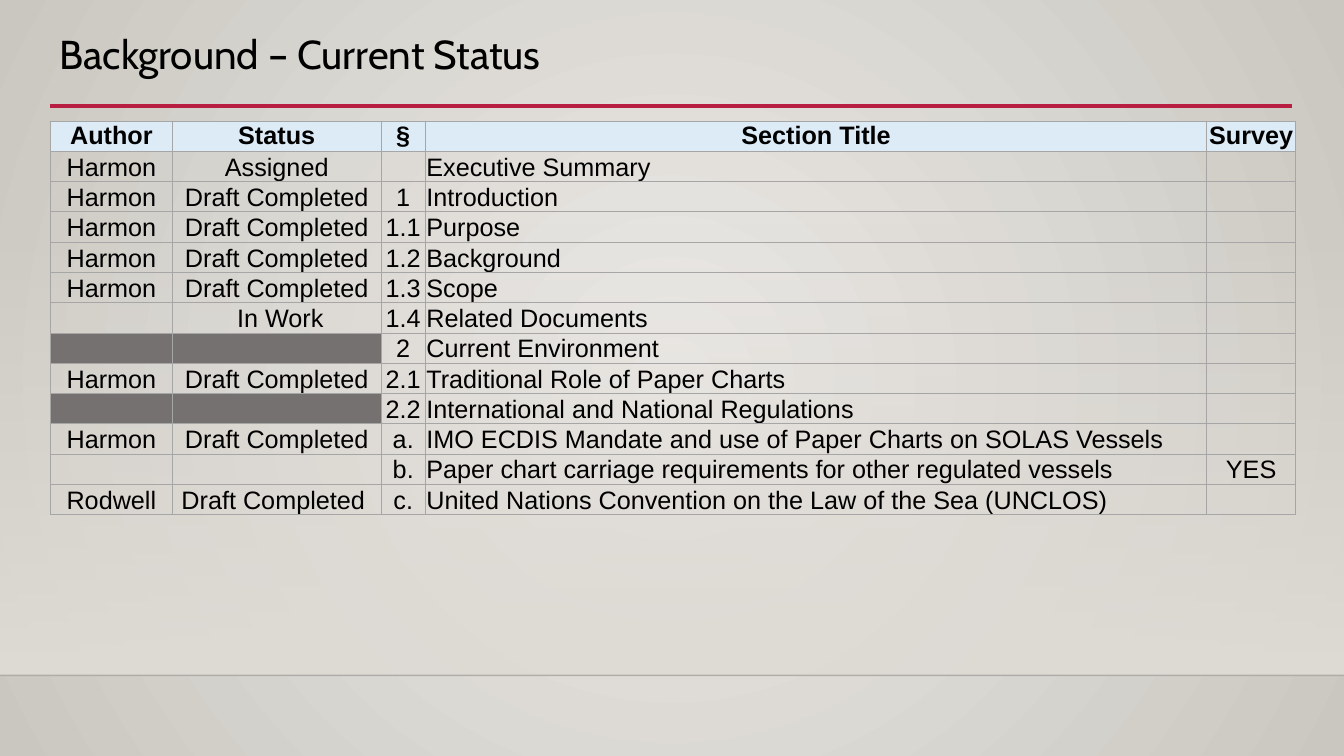
import pptx
import pptx.dml.color
import pptx.enum.shapes
import pptx.enum.text
import pptx.oxml
import pptx.oxml.ns
import pptx.util
from lxml import etree

Inches = pptx.util.Inches
Pt = pptx.util.Pt
RGBColor = pptx.dml.color.RGBColor
ALIGN = pptx.enum.text.PP_ALIGN
ANCHOR = pptx.enum.text.MSO_ANCHOR
qn = pptx.oxml.ns.qn

BLACK = RGBColor(0x00, 0x00, 0x00)
LINE_BLACK = RGBColor(0x00, 0x00, 0x01)
CRIMSON = RGBColor(0xB7, 0x1E, 0x42)
PALE_STONE = RGBColor(0xEC, 0xEA, 0xE7)
DARK_STONE = RGBColor(0xCA, 0xC7, 0xC1)
FLOOR_STONE = RGBColor(0xDF, 0xDB, 0xD5)
HEADER_BLUE = RGBColor(0xDD, 0xEB, 0xF7)
BLOCKED_GREY = RGBColor(0x75, 0x71, 0x71)
BORDER_GREY = RGBColor(0xA6, 0xA6, 0xA6)

COLUMN_WIDTHS = [1.21, 2.07, 0.44, 7.75, 0.88]
TITLE_COLUMN = 3
BLOCKED_ROWS = (7, 9)
ROWS = [
    ("Author", "Status", "§", "Section Title", "Survey"),
    ("Harmon", "Assigned", "", "Executive Summary", ""),
    ("Harmon", "Draft Completed", "1", "Introduction", ""),
    ("Harmon", "Draft Completed", "1.1", "Purpose", ""),
    ("Harmon", "Draft Completed", "1.2", "Background", ""),
    ("Harmon", "Draft Completed", "1.3", "Scope", ""),
    ("", " In Work", "1.4", "Related Documents", ""),
    ("", "", "2", "Current Environment", ""),
    ("Harmon", "Draft Completed", "2.1", "Traditional Role of Paper Charts", ""),
    ("", "", "2.2", "International and National Regulations", ""),
    ("Harmon", "Draft Completed", "a.",
     "IMO ECDIS Mandate and use of Paper Charts on SOLAS Vessels", ""),
    ("", "", "b.",
     "Paper chart carriage requirements for other regulated vessels", "YES"),
    ("Rodwell", "Draft Completed ", "c.",
     "United Nations Convention on the Law of the Sea (UNCLOS)", ""),
]


def add_rule(page, left, right, top, color, width):
    rule = page.shapes.add_connector(
        pptx.enum.shapes.MSO_CONNECTOR.STRAIGHT,
        Inches(left), Inches(top), Inches(right), Inches(top))
    rule.line.color.rgb = color
    rule.line.width = Pt(width)
    etree.SubElement(rule._element.spPr, qn("a:effectLst"))
    return rule


def add_borders(cell):
    properties = cell._tc.get_or_add_tcPr()
    for side in ("lnL", "lnR", "lnT", "lnB"):
        border = etree.SubElement(properties, qn("a:" + side), w=str(Pt(0.5)))
        fill = etree.SubElement(border, qn("a:solidFill"))
        etree.SubElement(fill, qn("a:srgbClr"), val=str(BORDER_GREY))


deck = pptx.Presentation()
deck.slide_width = Inches(13.33)
deck.slide_height = Inches(7.5)
page = deck.slides.add_slide(deck.slide_layouts[6])

# Background: light in the centre, darker towards the corners
backdrop = page.background.fill
backdrop.gradient()
for stop, color in zip(backdrop.gradient_stops, (PALE_STONE, DARK_STONE)):
    stop.color.rgb = color
linear = page._element.find(".//" + qn("a:lin"))
circle = etree.Element(qn("a:path"), {"path": "circle"})
etree.SubElement(circle, qn("a:fillToRect"), l="50000", t="50000", r="50000", b="50000")
linear.getparent().replace(linear, circle)

# Wall fading in from transparent, down to the floor line
wall = page.shapes.add_shape(
    pptx.enum.shapes.MSO_SHAPE.RECTANGLE,
    Inches(0), Inches(2.21), Inches(13.33), Inches(4.49))
wall.shadow.inherit = False
wall.line.fill.background()
wall.fill.gradient()
wall.fill.gradient_angle = 270
for stop in wall.fill.gradient_stops:
    stop.color.rgb = FLOOR_STONE
clear_color = wall._element.spPr.find(".//" + qn("a:srgbClr"))
etree.SubElement(clear_color, qn("a:alpha"), val="0")

floor_line = add_rule(page, 0, 13.33, 6.7, LINE_BLACK, 1)
line_color = floor_line._element.spPr.find(".//" + qn("a:srgbClr"))
etree.SubElement(line_color, qn("a:alpha"), val="20000")
add_rule(page, 0.5, 12.81, 1.05, CRIMSON, 2.5)

# Title
title_box = page.shapes.add_textbox(Inches(0.49), Inches(0.28), Inches(10.5), Inches(0.56))
title_frame = title_box.text_frame
title_frame.word_wrap = True
title_frame.vertical_anchor = ANCHOR.MIDDLE
title_frame.text = "Background – Current Status"
title_para = title_frame.paragraphs[0]
title_para.line_spacing = 0.9
title_font = title_para.runs[0].font
title_font.name = "Cabin"
title_font.size = Pt(28.8)
title_font.color.rgb = BLACK

# Status table
table = page.shapes.add_table(
    len(ROWS), len(COLUMN_WIDTHS), Inches(0.5), Inches(1.2),
    Inches(sum(COLUMN_WIDTHS)), Inches(0.25 * len(ROWS))).table
table.first_row = False
table.horz_banding = False
for column, width in zip(table.columns, COLUMN_WIDTHS):
    column.width = Inches(width)

for row_index, texts in enumerate(ROWS):
    is_header = row_index == 0
    table.rows[row_index].height = Inches(0.25)
    for column_index, text in enumerate(texts):
        cell = table.cell(row_index, column_index)
        cell.margin_left = cell.margin_right = Inches(0.01)
        cell.margin_top = cell.margin_bottom = 0
        cell.vertical_anchor = ANCHOR.MIDDLE if is_header else ANCHOR.BOTTOM
        add_borders(cell)
        if is_header:
            cell.fill.solid()
            cell.fill.fore_color.rgb = HEADER_BLUE
        elif row_index in BLOCKED_ROWS and column_index < 2:
            cell.fill.solid()
            cell.fill.fore_color.rgb = BLOCKED_GREY
        else:
            cell.fill.background()
        if not text:
            continue
        cell.text_frame.text = text
        para = cell.text_frame.paragraphs[0]
        is_left = column_index == TITLE_COLUMN and not is_header
        para.alignment = ALIGN.LEFT if is_left else ALIGN.CENTER
        font = para.runs[0].font
        font.name = "Arial"
        font.size = Pt(18)
        font.bold = is_header
        font.color.rgb = BLACK

deck.save("out.pptx")
